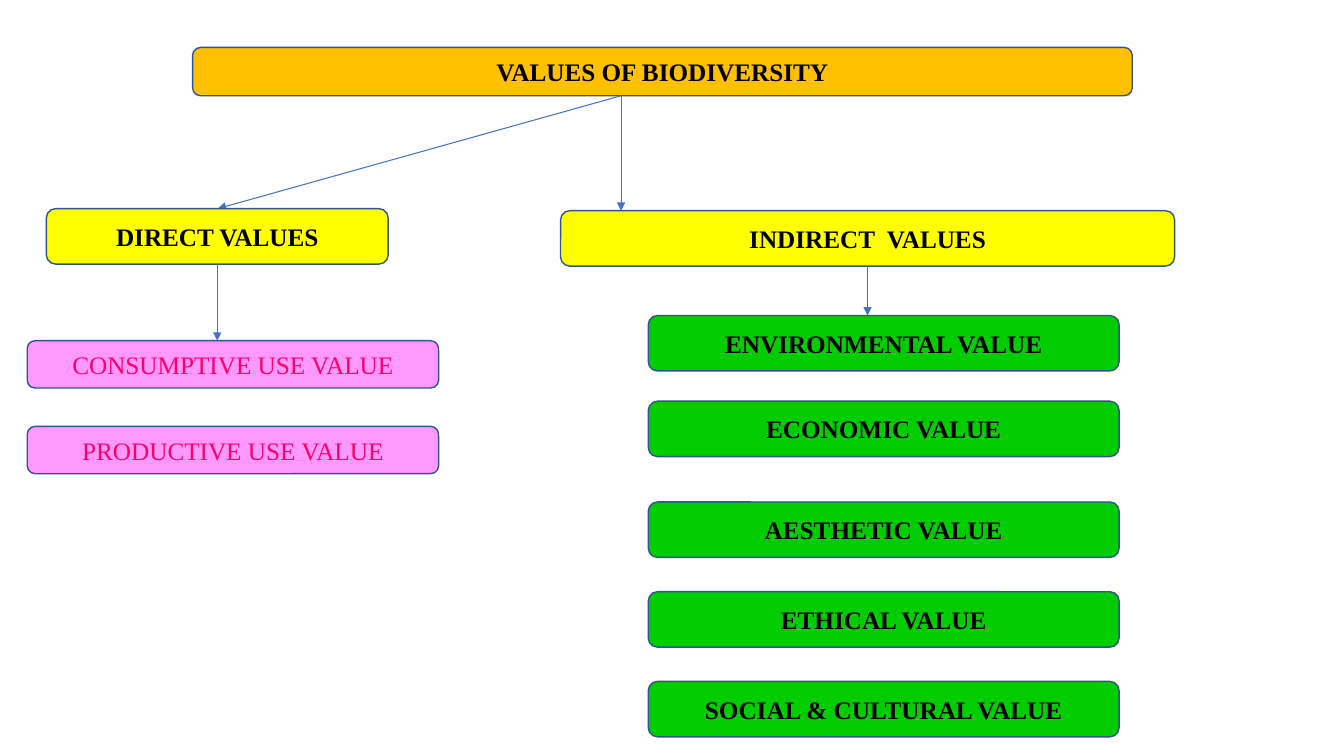
import collections

import lxml.etree
import pptx
import pptx.dml.color
import pptx.enum.shapes
import pptx.enum.text
import pptx.oxml.ns
import pptx.util

Inches = pptx.util.Inches
Pt = pptx.util.Pt
RGBColor = pptx.dml.color.RGBColor

AMBER = RGBColor(0xFF, 0xC0, 0x00)
YELLOW = RGBColor(0xFF, 0xFF, 0x00)
PINK = RGBColor(0xFF, 0x99, 0xFF)
GREEN = RGBColor(0x00, 0xCC, 0x00)
ROSE = RGBColor(0xFF, 0x00, 0x66)
BLACK = RGBColor(0x00, 0x00, 0x00)
OUTLINE = RGBColor(0x31, 0x53, 0x8F)
ARROW = RGBColor(0x44, 0x72, 0xC4)
FONT = "Times New Roman"

Box = collections.namedtuple("Box", "left top width height")
Style = collections.namedtuple("Style", "fill color bold")

TITLE_STYLE = Style(AMBER, BLACK, True)
HEADING_STYLE = Style(YELLOW, BLACK, True)
DIRECT_STYLE = Style(PINK, ROSE, False)
INDIRECT_STYLE = Style(GREEN, BLACK, True)

HEADING_HEIGHT = 0.55


def add_label(slide, box, wording, style):
    label = slide.shapes.add_shape(
        pptx.enum.shapes.MSO_SHAPE.ROUNDED_RECTANGLE,
        *(Inches(length) for length in box))
    label.shadow.inherit = False
    label.fill.solid()
    label.fill.fore_color.rgb = style.fill
    label.line.color.rgb = OUTLINE
    label.line.width = Pt(1)
    frame = label.text_frame
    frame.word_wrap = True
    frame.vertical_anchor = pptx.enum.text.MSO_ANCHOR.MIDDLE
    paragraph = frame.paragraphs[0]
    paragraph.alignment = pptx.enum.text.PP_ALIGN.CENTER
    run = paragraph.add_run()
    run.text = wording
    run.font.name = FONT
    run.font.size = Pt(18)
    run.font.bold = style.bold
    run.font.color.rgb = style.color


def add_arrow(slide, start, end):
    arrow = slide.shapes.add_connector(
        pptx.enum.shapes.MSO_CONNECTOR.STRAIGHT,
        *(Inches(length) for length in start + end))
    arrow.line.color.rgb = ARROW
    arrow.line.width = Pt(0.75)
    qn = pptx.oxml.ns.qn
    lxml.etree.SubElement(arrow.line._get_or_add_ln(), qn("a:tailEnd"), type="triangle")
    lxml.etree.SubElement(arrow._element.spPr, qn("a:effectLst"))


def add_title(slide, box, branch_tops):
    add_label(slide, box, "VALUES OF BIODIVERSITY", TITLE_STYLE)
    start = (box.left + 4.25, box.top + box.height)
    for end in branch_tops:
        add_arrow(slide, start, end)


def add_branch(slide, box, heading, heading_span, values, value_span, value_height, style):
    heading_left, heading_width = heading_span
    value_left, value_width = value_span
    add_label(slide, Box(box.left + heading_left, box.top, heading_width, HEADING_HEIGHT),
              heading, HEADING_STYLE)
    for wording, offset in values:
        add_label(slide, Box(box.left + value_left, box.top + offset, value_width, value_height),
                  wording, style)
    center = box.left + heading_left + heading_width / 2
    first_offset = values[0][1]
    add_arrow(slide, (center, box.top + HEADING_HEIGHT), (center, box.top + first_offset))


def main():
    deck = pptx.Presentation()
    deck.slide_width = Inches(13.33)
    deck.slide_height = Inches(7.5)
    slide = deck.slides.add_slide(deck.slide_layouts[6])

    direct = Box(0.27, 2.07, 4.08, 2.63)
    indirect = Box(5.56, 2.09, 6.09, 5.22)

    add_title(slide, Box(1.91, 0.47, 9.32, 0.48),
              [(2.16, direct.top), (6.16, indirect.top)])
    add_branch(slide, direct, "DIRECT VALUES", (0.19, 3.39),
               [("CONSUMPTIVE USE VALUE", 1.31),
                ("PRODUCTIVE USE VALUE", 2.16)],
               (0, direct.width), 0.47, DIRECT_STYLE)
    add_branch(slide, indirect, "INDIRECT  VALUES", (0, indirect.width),
               [("ENVIRONMENTAL VALUE", 1.04),
                ("ECONOMIC VALUE", 1.89),
                ("AESTHETIC VALUE", 2.89),
                ("ETHICAL VALUE", 3.78),
                ("SOCIAL & CULTURAL VALUE", 4.67)],
               (0.87, 4.67), 0.55, INDIRECT_STYLE)

    deck.save("out.pptx")


if __name__ == "__main__":
    main()
